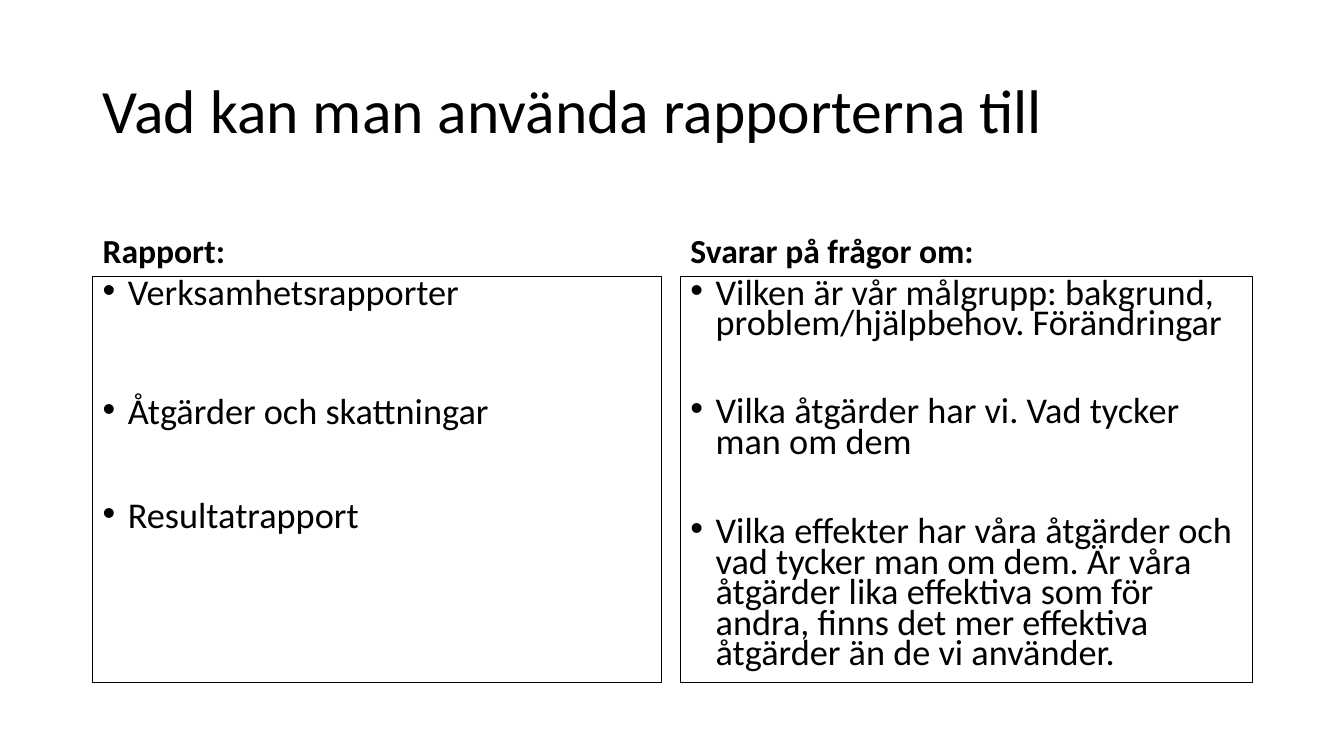
from dataclasses import dataclass

from lxml.etree import SubElement
from pptx import Presentation
from pptx.dml.color import RGBColor
from pptx.enum.shapes import MSO_SHAPE
from pptx.enum.text import MSO_ANCHOR as ANCHOR, MSO_AUTO_SIZE as AUTO, PP_ALIGN as ALIGN
from pptx.oxml.ns import qn
from pptx.slide import Slide
from pptx.util import Inches, Pt

BLACK = RGBColor(0x00, 0x00, 0x00)
FONT = "Calibri"
LEFT, HEAD_TOP, HEAD_H, BOX_H = 0.92, 1.84, 0.9, 4.03


@dataclass
class Item:
    text: str
    before: float


@dataclass
class Column:
    left: float
    width: float
    heading: str
    items: list[Item]


COLUMNS = [
    Column(LEFT, 5.64, "Rapport:", [
        Item("Verksamhetsrapporter", 10),
        Item("Åtgärder och skattningar", 63),
        Item("Resultatrapport", 53),
    ]),
    Column(6.75, 5.67, "Svarar på frågor om:", [
        Item("Vilken är vår målgrupp: bakgrund, problem/hjälpbehov. Förändringar", 10),
        Item("Vilka åtgärder har vi. Vad tycker man om dem", 41),
        Item("Vilka effekter har våra åtgärder och vad tycker man om dem. Är våra "
             "åtgärder lika effektiva som för andra, finns det mer effektiva "
             "åtgärder än de vi använder.", 42),
    ]),
]


def write(p, text: str, size: float, spacing: float, before: float = 0, bold: bool = False) -> None:
    p.alignment = ALIGN.LEFT
    p.line_spacing = spacing
    p.space_before = Pt(before)
    r = p.add_run()
    r.text = text
    r.font.name = FONT
    r.font.size = Pt(size)
    r.font.bold = bold
    r.font.color.rgb = BLACK


def add_bullet(p) -> None:
    pPr = p._p.get_or_add_pPr()
    pPr.set("marL", str(Inches(0.25)))
    pPr.set("indent", str(Inches(-0.25)))
    SubElement(pPr, qn("a:buFont"), typeface="Arial")
    SubElement(pPr, qn("a:buChar"), char="•")


def add_title(slide: Slide, text: str) -> None:
    sp = slide.shapes.title
    sp.left, sp.top, sp.width, sp.height = map(Inches, (LEFT, 0.4, 11.5, 1.45))
    tf = sp.text_frame
    tf.auto_size = AUTO.NONE
    tf.vertical_anchor = ANCHOR.MIDDLE
    write(tf.paragraphs[0], text, 44, 0.9)


def add_column(slide: Slide, col: Column) -> None:
    left, width = Inches(col.left), Inches(col.width)
    sp = slide.shapes.add_textbox(left, Inches(HEAD_TOP), width, Inches(HEAD_H))
    tf = sp.text_frame
    tf.word_wrap = True
    tf.vertical_anchor = ANCHOR.BOTTOM
    write(tf.paragraphs[0], col.heading, 24, 0.9, 10, True)

    sp = slide.shapes.add_shape(
        MSO_SHAPE.RECTANGLE, left, Inches(HEAD_TOP + HEAD_H), width, Inches(BOX_H))
    sp.shadow.inherit = False
    sp.fill.background()
    sp.line.color.rgb = BLACK
    sp.line.width = Pt(0.75)
    tf = sp.text_frame
    tf.word_wrap = True
    tf.vertical_anchor = ANCHOR.TOP
    for i, item in enumerate(col.items):
        p = tf.add_paragraph() if i else tf.paragraphs[0]
        write(p, item.text, 25.9, 0.7, item.before)
        add_bullet(p)


def main() -> None:
    prs = Presentation()
    prs.slide_width, prs.slide_height = Inches(13.33), Inches(7.5)
    slide = prs.slides.add_slide(prs.slide_layouts[5])
    add_title(slide, "Vad kan man använda rapporterna till")
    for col in COLUMNS:
        add_column(slide, col)
    prs.save("out.pptx")


if __name__ == "__main__":
    main()
